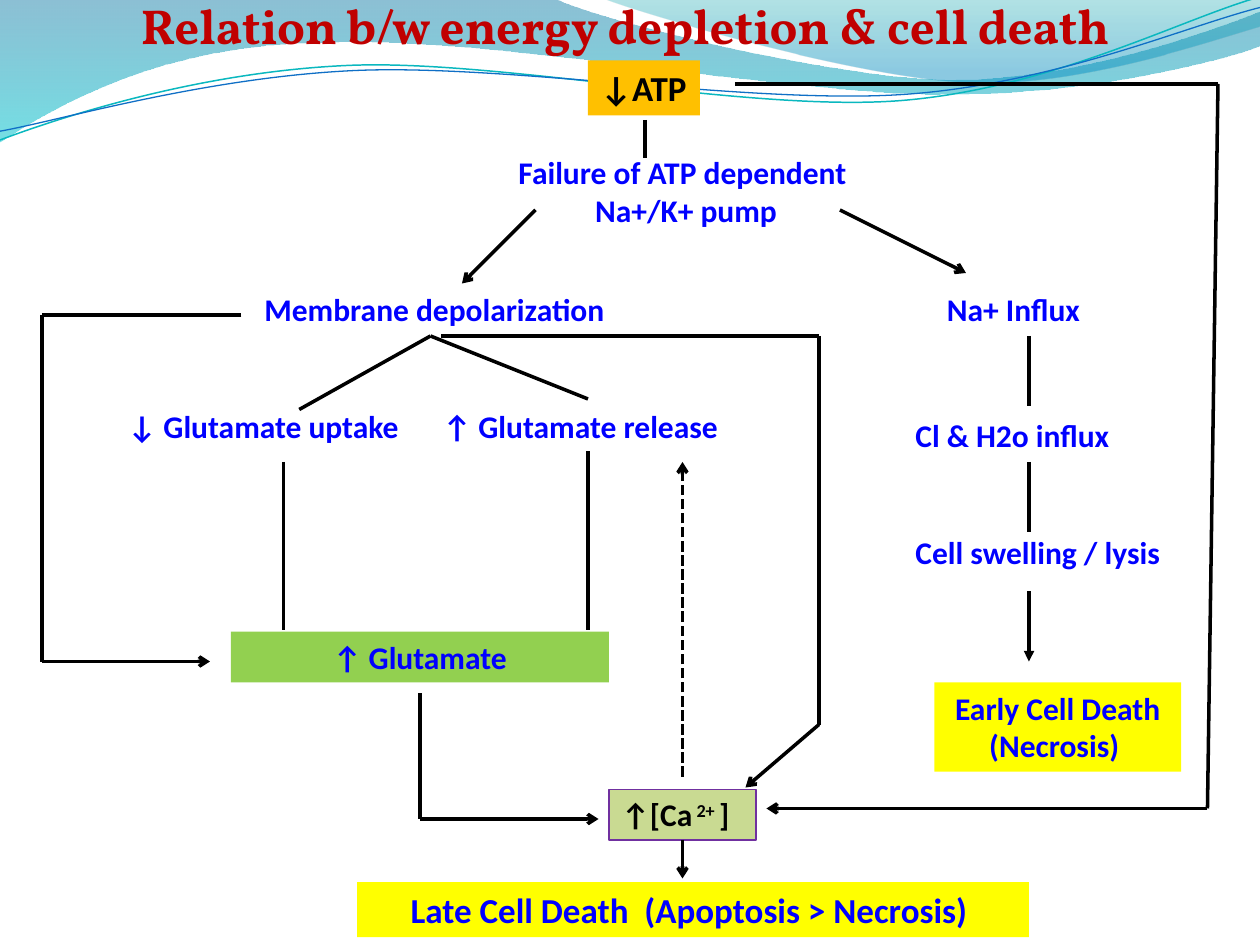
from pptx import Presentation
from pptx.dml.color import RGBColor
from pptx.enum.dml import MSO_LINE
from pptx.enum.shapes import MSO_CONNECTOR, MSO_SHAPE
from pptx.enum.text import MSO_ANCHOR, PP_ALIGN
from pptx.oxml.ns import qn
from pptx.util import Pt
from lxml import etree

STRAIGHT = MSO_CONNECTOR.STRAIGHT
RECT = MSO_SHAPE.RECTANGLE
TOP = MSO_ANCHOR.TOP
LEFT, CENTER = PP_ALIGN.LEFT, PP_ALIGN.CENTER
DASH = MSO_LINE.SQUARE_DOT
BOTTOM_SITE = 2

BLACK = RGBColor(0x00, 0x00, 0x00)
BLUE = RGBColor(0x00, 0x00, 0xFF)
RED = RGBColor(0xC0, 0x00, 0x00)
YELLOW = RGBColor(0xFF, 0xFF, 0x00)
ORANGE = RGBColor(0xFF, 0xC0, 0x00)
GREEN = RGBColor(0x92, 0xD0, 0x50)
PALE_GREEN = RGBColor(0xC9, 0xDA, 0x92)
PURPLE = RGBColor(0x70, 0x30, 0xA0)
DEEP_BLUE = RGBColor(0x00, 0x74, 0xA1)
AQUA = RGBColor(0x00, 0xC6, 0xCF)
TEAL = RGBColor(0x00, 0xA1, 0xA9)
SEA_BLUE = RGBColor(0x00, 0x8B, 0xBF)
CYAN_LINE = RGBColor(0x0A, 0xB8, 0xBF)
BLUE_LINE = RGBColor(0x0F, 0x6F, 0xC6)


def add_path(slide, steps, close):
    points = [(Pt(step[i]), Pt(step[i + 1])) for step in steps for i in range(0, len(step), 2)]
    builder = slide.shapes.build_freeform(*points[0])
    builder.add_line_segments(points[1:], close=close)
    s = builder.convert_to_shape()
    s.shadow.inherit = False
    segments = iter(list(s.element.iter(qn("a:lnTo"))))
    for step in steps[1:]:
        first = next(segments)
        if len(step) == 6:
            first.tag = qn("a:cubicBezTo")
            for _ in range(2):
                segment = next(segments)
                first.append(segment[0])
                segment.getparent().remove(segment)
    return s


def add_wave(slide, steps, stops):
    s = add_path(slide, steps, True)
    s.line.fill.background()
    s.fill.gradient()
    s.fill.gradient_angle = 270
    for stop, (position, color, _) in zip(s.fill.gradient_stops, stops):
        stop.position = position
        stop.color.rgb = color
    for element, (_, _, opacity) in zip(s.element.spPr.iter(qn("a:srgbClr")), stops):
        etree.SubElement(element, qn("a:alpha")).set("val", str(opacity * 1000))


def add_ripple(slide, steps, color, width):
    s = add_path(slide, steps, False)
    s.fill.background()
    s.line.color.rgb = color
    s.line.width = Pt(width)


def add_label(slide, lines, box, fill=None, color=BLUE, size=18, align=LEFT,
              wrap=True, border=None, font="Calibri"):
    frame = [Pt(v) for v in box]
    if fill is None:
        s = slide.shapes.add_textbox(*frame)
    else:
        s = slide.shapes.add_shape(RECT, *frame)
        s.shadow.inherit = False
        s.fill.solid()
        s.fill.fore_color.rgb = fill
        if border is None:
            s.line.fill.background()
        else:
            s.line.color.rgb = border
            s.line.width = Pt(0.75)
    tf = s.text_frame
    tf.word_wrap = wrap
    tf.vertical_anchor = TOP
    for i, line in enumerate(lines):
        p = tf.add_paragraph() if i else tf.paragraphs[0]
        p.alignment = align
        for j, piece in enumerate(line.split("^")):
            r = p.add_run()
            r.text = piece
            r.font.name = font
            r.font.size = Pt(size)
            r.font.bold = True
            r.font.color.rgb = color
            if j % 2:
                r.font._element.set("baseline", "30000")
    return s


def add_route(slide, points, head=None, dash=None):
    last = len(points) - 2
    for i, (start, end) in enumerate(zip(points, points[1:])):
        s = slide.shapes.add_connector(STRAIGHT, *[Pt(v) for v in start + end])
        s.line.color.rgb = BLACK
        s.line.width = Pt(2)
        if dash is not None:
            s.line.dash_style = dash
        if head and i == last:
            etree.SubElement(s.line._get_or_add_ln(), qn("a:tailEnd")).set("type", head)
        etree.SubElement(s.element.spPr, qn("a:effectLst"))
    return s


def draw_background(slide):
    add_wave(slide, [(0, -0.7), (317, -0.7), (343, 12, 478, 45.4, 546, 45.4),
                     (614, 45.4, 690, 18.7, 720, 6.5), (720.7, 26),
                     (708, 31.7, 626, 54.7, 537, 54), (448, 54, 275, 20.2, 185, 24.5),
                     (93, 25.2, 33, 59.8, -0.7, 81.4)],
             [(0, DEEP_BLUE, 45), (1, AQUA, 55)])
    add_wave(slide, [(345, -0.7), (366.5, 8, 491, 44.6, 553.7, 46.8),
                     (616, 49.7, 692, 23, 720, 15), (720, 0)],
             [(0, TEAL, 30), (0.8, SEA_BLUE, 45)])
    add_ripple(slide, [(0, 80), (34.6, 67, 113.8, 41, 199.4, 37.4),
                       (284.4, 33.8, 427, 64, 513.4, 57.6),
                       (599.8, 51, 675.4, 10.8, 718.6, -1.4)], CYAN_LINE, 0.85)
    add_ripple(slide, [(0, 75), (33.8, 69, 118, 44, 203.8, 40.3),
                       (290, 36.7, 429.8, 59.8, 516.2, 54),
                       (602, 48.2, 677.5, 15, 720, 4.3)], BLUE_LINE, 0.75)


def draw_labels(slide):
    add_label(slide, ["Relation b/w energy depletion & cell death "], (0, -6, 720, 41),
              color=RED, size=28, align=CENTER, font="Vollkorn")
    add_label(slide, ["↓ATP"], (336, 34.5, 64, 31.5), ORANGE, BLACK, 20, wrap=False)
    add_label(slide, ["Failure of ATP dependent", " Na+/K+ pump"], (288, 84, 204, 51),
              align=CENTER, wrap=False)
    add_label(slide, ["Membrane depolarization"], (144, 162, 234, 29))
    add_label(slide, ["Na+ Influx"], (534, 162, 96, 29), wrap=False)
    add_label(slide, ["↓ Glutamate uptake"], (66, 229, 198, 29))
    add_label(slide, ["↑ Glutamate release"], (246, 229, 186, 29))
    add_label(slide, ["Cl & H2o influx"], (516, 234, 156, 29))
    add_label(slide, ["Cell swelling / lysis"], (516, 301, 156, 29))
    add_label(slide, ["↑ Glutamate"], (132, 361, 216, 29), GREEN, align=CENTER)
    add_label(slide, [" Early Cell Death ", "(Necrosis) "], (534, 390, 141, 51), YELLOW,
              align=CENTER, wrap=False)
    add_label(slide, ["Late Cell Death  (Apoptosis > Necrosis) "], (204, 504, 384, 31.5),
              YELLOW, size=20, align=CENTER)
    return add_label(slide, ["↑[Ca^ 2+ ^]"], (348, 451, 84, 29), PALE_GREEN, BLACK,
                     border=PURPLE)


def draw_routes(slide, calcium):
    plain = [
        [(368.5, 68.5), (368.5, 90)],
        [(246, 192), (171, 234)],
        [(246, 192), (336, 228)],
        [(162, 264), (162, 360)],
        [(336, 258), (336, 360)],
        [(588, 192), (588, 232)],
        [(588, 264), (588, 304)],
    ]
    arrows = [
        [(306, 120), (264, 162)],
        [(480, 120), (552, 156)],
        [(138, 180), (24, 180), (24, 378), (120, 378)],
        [(252, 192), (468, 192), (468, 414), (426, 450)],
        [(420, 48), (696, 48), (690, 462), (438, 462)],
        [(240, 396), (240, 468), (342, 468)],
    ]
    for points in plain:
        add_route(slide, points)
    for points in arrows:
        add_route(slide, points, "arrow")
    add_route(slide, [(588, 338), (588, 378)], "triangle")
    add_route(slide, [(390, 444), (390, 264)], "arrow", DASH)
    late = add_route(slide, [(390, 480), (390, 502)], "arrow")
    late.begin_connect(calcium, BOTTOM_SITE)


def main():
    prs = Presentation()
    prs.slide_width, prs.slide_height = Pt(720), Pt(540)
    slide = prs.slides.add_slide(prs.slide_layouts[6])
    draw_background(slide)
    calcium = draw_labels(slide)
    draw_routes(slide, calcium)
    prs.save("out.pptx")


if __name__ == "__main__":
    main()
